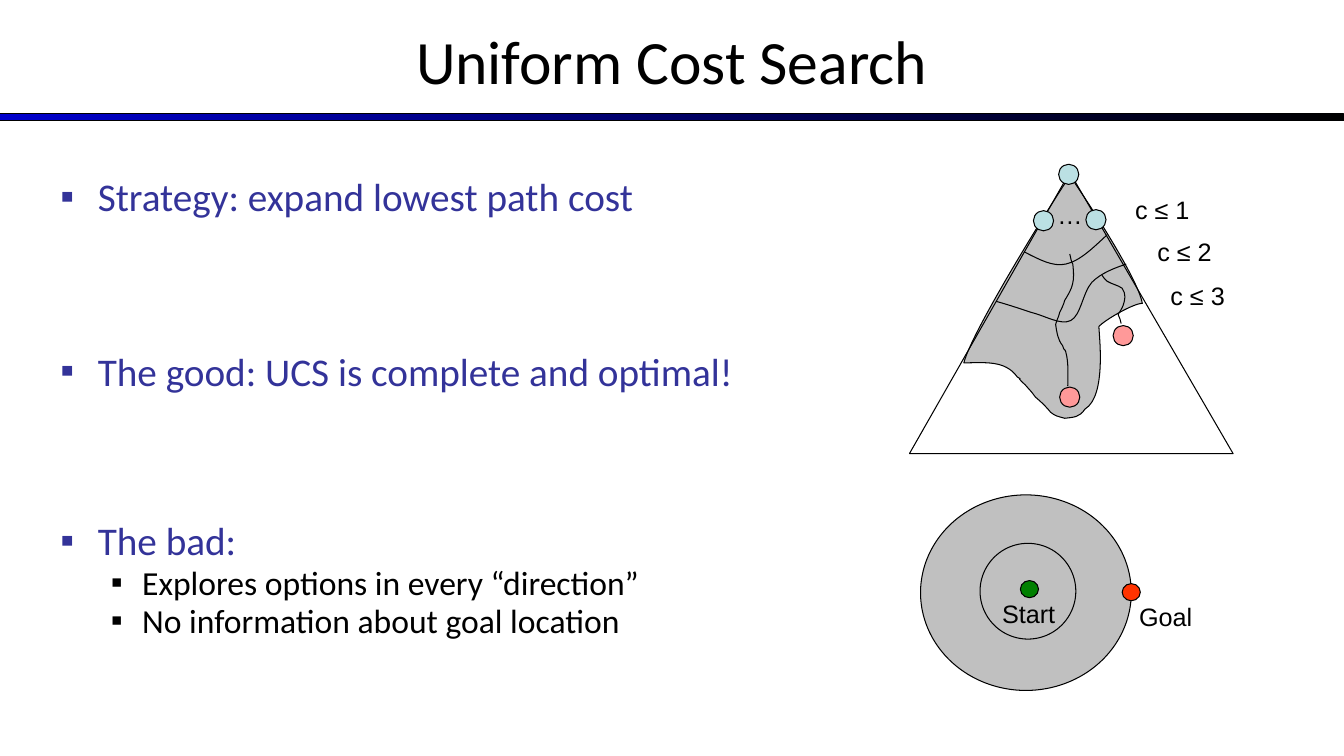
from dataclasses import dataclass
from typing import Optional

import lxml.etree
import pptx
import pptx.dml.color
import pptx.enum.shapes
import pptx.enum.text
import pptx.oxml.ns
import pptx.util

RGBColor = pptx.dml.color.RGBColor
Pt = pptx.util.Pt
Kind = pptx.enum.shapes.MSO_SHAPE
qn = pptx.oxml.ns.qn

PX = 9144  # EMU in one px, 100 px to the inch

BLACK = RGBColor(0x00, 0x00, 0x00)
BLUE = RGBColor(0x00, 0x00, 0xCC)
INDIGO = RGBColor(0x33, 0x33, 0x99)
GREY = RGBColor(0xC0, 0xC0, 0xC0)
AQUA = RGBColor(0xBB, 0xE0, 0xE3)
PINK = RGBColor(0xFF, 0x99, 0x99)
GREEN = RGBColor(0x00, 0x80, 0x00)
RED = RGBColor(0xFF, 0x33, 0x00)

Point = tuple[int, int]


@dataclass
class Disc:
    left: int
    top: int
    width: int
    height: int
    fill: Optional[RGBColor] = None


@dataclass
class Label:
    text: str
    left: int
    top: int
    width: int


@dataclass
class Outline:
    """Corners, or a start point and three points for each cubic bend."""
    points: list[Point]
    fill: Optional[RGBColor] = None
    curved: bool = True
    closed: bool = False


@dataclass
class Item:
    text: str
    level: int
    before: float


TREE = Outline([(902, 450), (1223, 450), (1061, 171)],
               curved=False, closed=True)
REGION = Outline([
    (1067, 183), (1080, 202), (1129, 277), (1133, 301),
    (1124, 301), (1095, 318), (1090, 324),
    (1090, 332), (1098, 393), (1076, 406),
    (1071, 414), (1065, 414), (1056, 415),
    (1049, 413), (1047, 413), (1042, 409),
    (1039, 405), (1032, 398), (1027, 394),
    (1021, 386), (1024, 390), (1017, 382),
    (1004, 370), (1017, 379), (1009, 374),
    (997, 357), (976, 360), (956, 360),
    (964, 329), (1036, 213), (1055, 184),
    (1073, 155), (1064, 183), (1067, 183),
], GREY, closed=True)
LONG = Outline([
    (1061, 252), (1062, 255), (1062, 259), (1064, 262),
    (1066, 280), (1064, 285), (1056, 298),
    (1055, 302), (1053, 306), (1051, 310),
    (1049, 317), (1051, 311), (1049, 316),
    (1048, 318), (1047, 322), (1047, 322),
    (1048, 329), (1049, 337), (1054, 343),
    (1055, 344), (1055, 345), (1055, 346),
    (1056, 347), (1057, 348), (1057, 349),
    (1060, 360), (1059, 370), (1059, 383),
])
SHORT = Outline([
    (1093, 273), (1094, 275), (1096, 277), (1098, 279),
    (1103, 282), (1109, 283), (1113, 286),
    (1117, 292), (1116, 297), (1114, 303),
    (1113, 306), (1109, 312), (1109, 312),
    (1110, 315), (1112, 318), (1112, 321),
])
LOWER = Outline([
    (1117, 262), (1105, 266), (1092, 271), (1083, 280),
    (1074, 290), (1072, 313), (1062, 318),
    (1052, 323), (1036, 313), (1023, 310),
    (1011, 306), (999, 302), (988, 299),
])
UPPER = Outline([
    (1098, 233), (1084, 246), (1071, 259), (1057, 262),
    (1044, 265), (1030, 257), (1016, 250),
])

# Drawn from back to front
PARTS = [
    Disc(913, 491, 209, 194, GREY),
    REGION,
    Disc(1012, 576, 18, 17, GREEN),
    Label("Start", 984, 589, 100),
    Disc(1113, 579, 18, 17, RED),
    Label("Goal", 1120, 592, 100),
    TREE,
    Disc(1025, 209, 20, 20, AQUA),
    Disc(1077, 208, 20, 20, AQUA),
    Label("…", 1039, 193, 30),
    Disc(1104, 323, 20, 20, PINK),
    Disc(1051, 384, 20, 20, PINK),
    LONG,
    SHORT,
    Disc(1050, 163, 20, 20, AQUA),
    LOWER,
    UPPER,
    Disc(972, 539, 95, 95),
    Label("c ≤ 3", 1151, 273, 90),
    Label("c ≤ 2", 1138, 230, 90),
    Label("c ≤ 1", 1116, 188, 90),
]
ITEMS = [
    Item("Strategy: expand lowest path cost", 0, 0),
    Item("The good: UCS is complete and optimal!", 0, 98),
    Item("The bad:", 0, 94),
    Item("Explores options in every “direction”", 1, 4.5),
    Item("No information about goal location", 1, 4.5),
]
# size, colour, left margin in px, hanging indent in px
LEVELS = [(28, INDIGO, 37, -37), (24, BLACK, 81, -31)]


def place(shape, left: int, top: int, width: int, height: int) -> None:
    shape.left, shape.top = left * PX, top * PX
    shape.width, shape.height = width * PX, height * PX


def paint(shape, fill: Optional[RGBColor]) -> None:
    shape.shadow.inherit = False
    shape.line.color.rgb = BLACK
    shape.line.width = Pt(0.75)
    if fill is None:
        shape.fill.background()
    else:
        shape.fill.solid()
        shape.fill.fore_color.rgb = fill


def style(para, name: str, size: int, color: RGBColor) -> None:
    para.font.name = name
    para.font.size = Pt(size)
    para.font.color.rgb = color


def draw_disc(shapes, disc: Disc) -> None:
    shape = shapes.add_shape(Kind.OVAL, disc.left * PX, disc.top * PX,
                             disc.width * PX, disc.height * PX)
    paint(shape, disc.fill)


def bend(shape) -> None:
    """Turn each three line pieces into one cubic bend."""
    lines = list(shape._element.iter(qn("a:lnTo")))
    for i in range(0, len(lines), 3):
        cubic = lxml.etree.Element(qn("a:cubicBezTo"))
        lines[i].addprevious(cubic)
        for line in lines[i:i + 3]:
            cubic.append(line[0])
            line.getparent().remove(line)


def draw_outline(shapes, outline: Outline) -> None:
    first, *rest = outline.points
    pen = shapes.build_freeform(*first, scale=PX)
    pen.add_line_segments(rest, close=outline.closed)
    shape = pen.convert_to_shape()
    paint(shape, outline.fill)
    if outline.curved:
        bend(shape)


def draw_label(shapes, label: Label) -> None:
    box = shapes.add_textbox(label.left * PX, label.top * PX,
                             label.width * PX, 40 * PX)
    box.text_frame.word_wrap = True
    para = box.text_frame.paragraphs[0]
    para.text = label.text
    style(para, "Arial", 18, BLACK)


def fill_item(para, item: Item) -> None:
    size, color, margin, indent = LEVELS[item.level]
    para.text = item.text
    para.level = item.level
    para.line_spacing = 0.8
    para.space_before = Pt(item.before)
    style(para, "Calibri", size, color)
    props = para._p.get_or_add_pPr()
    props.set("marL", str(margin * PX))
    props.set("indent", str(indent * PX))
    tint = lxml.etree.SubElement(props, qn("a:buClr"))
    lxml.etree.SubElement(tint, qn("a:srgbClr")).set("val", str(color))
    lxml.etree.SubElement(props, qn("a:buFont")).set("typeface", "Arial")
    lxml.etree.SubElement(props, qn("a:buChar")).set("char", "▪")
    props.append(props.find(qn("a:defRPr")))  # must follow the bullet


def main() -> None:
    deck = pptx.Presentation()
    deck.slide_width, deck.slide_height = 1333 * PX, 750 * PX
    slide = deck.slides.add_slide(deck.slide_layouts[1])
    shapes = slide.shapes

    # Title and rule
    title = shapes.title
    place(title, 0, -3, 1333, 125)
    title.text_frame.text = "Uniform Cost Search"
    title.text_frame.auto_size = pptx.enum.text.MSO_AUTO_SIZE.NONE
    title.text_frame.vertical_anchor = pptx.enum.text.MSO_ANCHOR.MIDDLE
    head = title.text_frame.paragraphs[0]
    head.alignment = pptx.enum.text.PP_ALIGN.CENTER
    style(head, "Calibri", 44, BLACK)
    rule = shapes.add_shape(Kind.RECTANGLE, 0, 113 * PX, 1333 * PX, 7 * PX)
    paint(rule, None)
    rule.fill.gradient()
    rule.fill.gradient_angle = 0
    for stop, color in zip(rule.fill.gradient_stops, (BLUE, BLACK)):
        stop.color.rgb = color

    # Bullet list
    body = slide.placeholders[1]
    place(body, 50, 175, 783, 495)
    frame = body.text_frame
    frame.auto_size = pptx.enum.text.MSO_AUTO_SIZE.NONE
    for i, item in enumerate(ITEMS):
        fill_item(frame.add_paragraph() if i else frame.paragraphs[0], item)

    # Search tree and cost rings
    tools = {Disc: draw_disc, Outline: draw_outline, Label: draw_label}
    for part in PARTS:
        tools[type(part)](shapes, part)

    deck.save("out.pptx")


if __name__ == "__main__":
    main()
